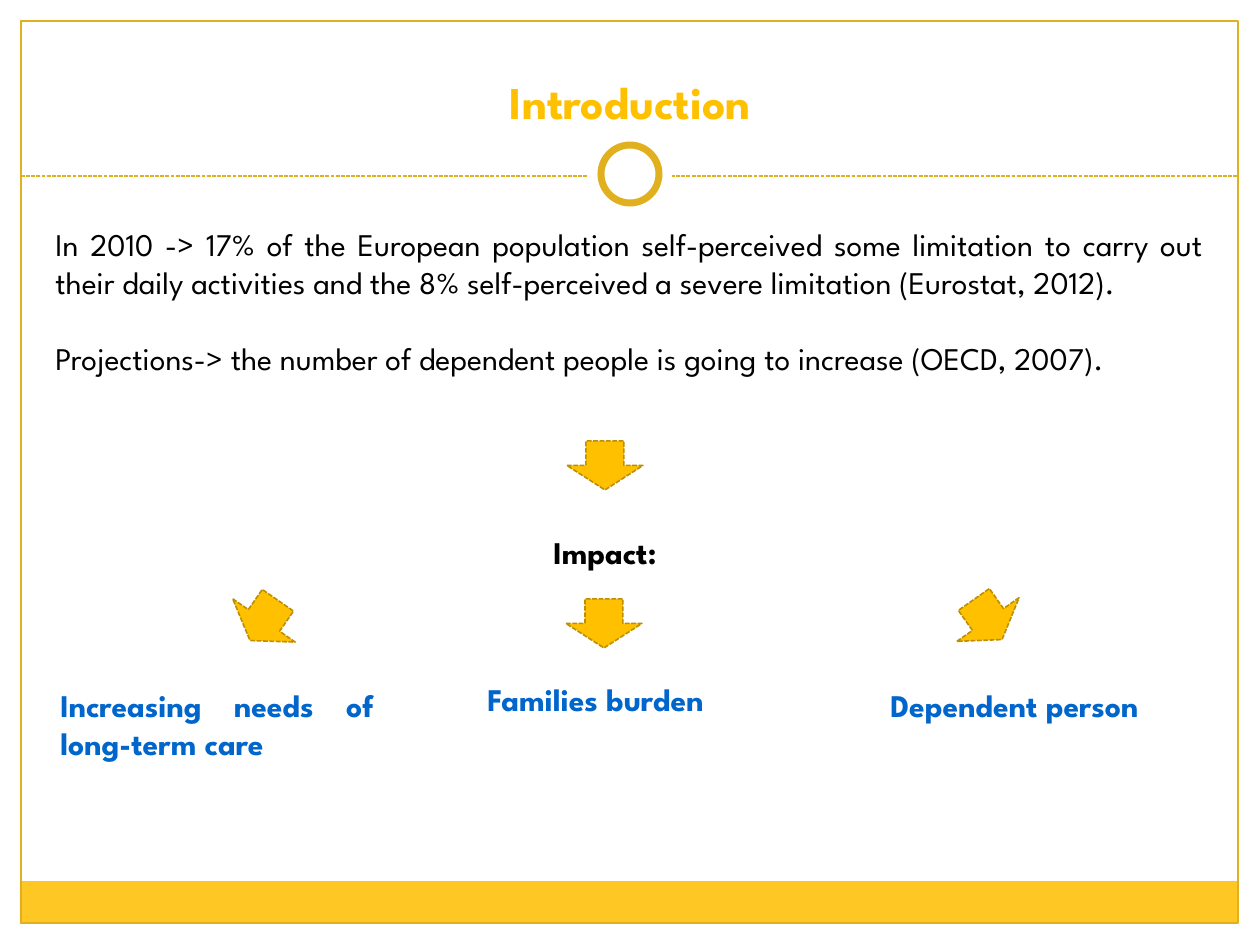
from pptx import Presentation
from pptx.dml.color import RGBColor
from pptx.enum.dml import MSO_LINE_DASH_STYLE as DASH
from pptx.enum.shapes import MSO_CONNECTOR, MSO_SHAPE as SHAPE
from pptx.enum.text import MSO_ANCHOR as ANCHOR, MSO_AUTO_SIZE as FIT, PP_ALIGN as ALIGN
from pptx.oxml.ns import qn
from pptx.util import Pt
from lxml import etree

WHITE = RGBColor(0xFF, 0xFF, 0xFF)
BLACK = RGBColor(0, 0, 0)
BLUE = RGBColor(0x00, 0x66, 0xCC)
AMBER = RGBColor(0xFF, 0xC0, 0x00)
BAND = RGBColor(0xFE, 0xC7, 0x23)
GOLD = RGBColor(0xE0, 0xB0, 0x1F)
BRONZE = RGBColor(0xBD, 0x8E, 0x00)

FONT = "League Spartan"
EMU_PER_PX = 914400 / 126
WIDTH, HEIGHT = 1260, 945
ARROW_SIZE = (76, 49)

TITLE = ["Introduction"]
FACTS = [
    "In 2010 -> 17% of the European population self-perceived some limitation "
    "to carry out their daily activities and the 8% self-perceived a severe "
    "limitation (Eurostat, 2012).",
    "Projections-> the number of dependent people is going to increase (OECD, 2007).",
]
HEADING = ["Impact:"]
IMPACTS = [
    ("Increasing needs of long-term care", (48, 680, 338, 89)),
    ("Families burden", (475, 674, 338, 50)),
    ("Dependent person", (878, 680, 338, 50)),
]
ARROWS = [(567, 441, 0), (226, 596, 34.7), (950, 595, 324.9), (566, 599, 0)]


def px(*values):
    """Turn pixel lengths into EMU."""
    return [round(v * EMU_PER_PX) for v in values]


def set_line(line, color, width, dash=None):
    """Format an outline or a connector."""
    for name, value in {"width": Pt(width), "dash_style": dash}.items():
        setattr(line, name, value)
    line.color.rgb = color


def add_shape(s, kind, box, fill=None, line=None, rotation=0):
    """Add a flat preset shape."""
    sp = s.shapes.add_shape(kind, *px(*box))
    sp.shadow.inherit = False
    sp.rotation = rotation
    if fill is None:
        sp.fill.background()
    else:
        sp.fill.solid()
        sp.fill.fore_color.rgb = fill
    if line:
        set_line(sp.line, *line)
    else:
        sp.line.fill.background()
    return sp


def add_text(s, texts, box, color, align, size=18, bold=True, anchor=ANCHOR.TOP, fit=FIT.SHAPE_TO_FIT_TEXT):
    """Add a text box with one paragraph per text."""
    tf = s.shapes.add_textbox(*px(*box)).text_frame
    for name, value in {"word_wrap": True, "auto_size": fit, "vertical_anchor": anchor}.items():
        setattr(tf, name, value)
    for i, text in enumerate(texts):
        p = tf.paragraphs[0] if i == 0 else tf.add_paragraph()
        p.alignment = align
        if i:
            p.space_before = Pt(22)
        r = p.add_run()
        r.text = text
        for name, value in {"name": FONT, "size": Pt(size), "bold": bold}.items():
            setattr(r.font, name, value)
        r.font.color.rgb = color


def add_frame(s):
    """Draw the border, bottom band, dashed rule and ring."""
    add_shape(s, SHAPE.RECTANGLE, (20, 881, 1218, 43), BAND)
    add_shape(s, SHAPE.RECTANGLE, (21, 21, 1217, 902), line=(GOLD, 0.75))
    rule = s.shapes.add_connector(MSO_CONNECTOR.STRAIGHT, *px(21, 176, 1238, 176))
    set_line(rule.line, GOLD, 0.75, DASH.SQUARE_DOT)
    etree.SubElement(rule._element.spPr, qn("a:effectLst"))
    for diameter, line in [(84, None), (58, (GOLD, 4))]:
        box = ((WIDTH - diameter) / 2, 174 - diameter / 2, diameter, diameter)
        add_shape(s, SHAPE.OVAL, box, WHITE, line)


def main():
    """Build the introduction slide."""
    prs = Presentation()
    prs.slide_width, prs.slide_height = px(WIDTH, HEIGHT)
    s = prs.slides.add_slide(prs.slide_layouts[6])
    add_frame(s)
    add_text(s, TITLE, (25, 45, 1211, 90), AMBER, ALIGN.CENTER, 26, anchor=ANCHOR.BOTTOM, fit=FIT.NONE)
    add_text(s, FACTS, (43, 219, 1173, 242), BLACK, ALIGN.JUSTIFY, bold=False)
    for x, y, rotation in ARROWS:
        add_shape(s, SHAPE.DOWN_ARROW, (x, y, *ARROW_SIZE), AMBER, (BRONZE, 0.9, DASH.SQUARE_DOT), rotation)
    add_text(s, HEADING, (290, 527, 630, 50), BLACK, ALIGN.CENTER)
    for text, box in IMPACTS:
        add_text(s, [text], box, BLUE, ALIGN.JUSTIFY)
    prs.save("out.pptx")


if __name__ == "__main__":
    main()
